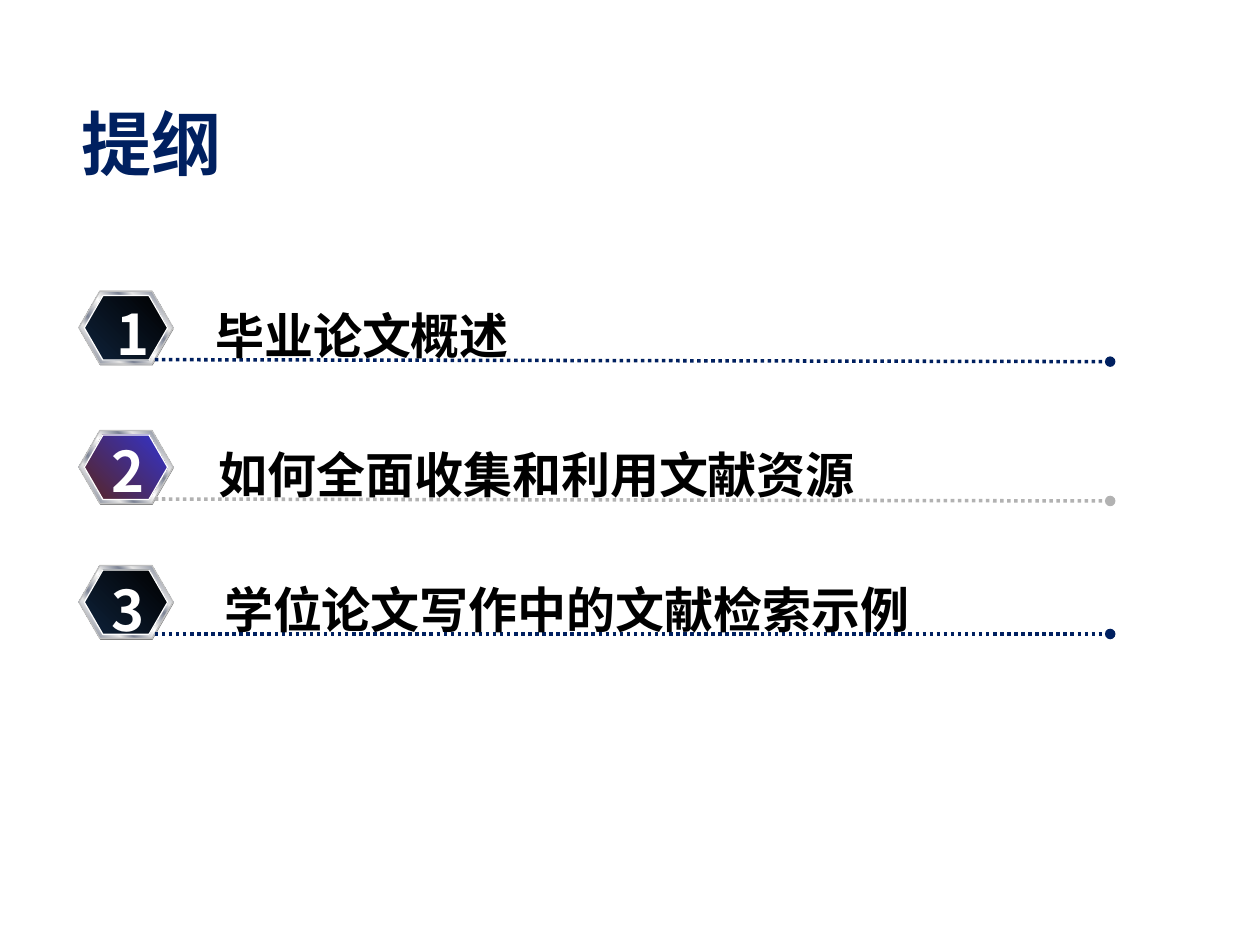
import pptx
import pptx.dml.color
import pptx.enum.dml
import pptx.enum.shapes
import pptx.enum.text
import pptx.oxml
import pptx.oxml.ns
import pptx.util
from lxml import etree

Cm = pptx.util.Cm
Pt = pptx.util.Pt
qn = pptx.oxml.ns.qn
ALIGN = pptx.enum.text.PP_ALIGN
ANCHOR = pptx.enum.text.MSO_ANCHOR

COLOURS = {
    "navy": "002060", "grey": "B2B2B2", "black": "000000", "white": "FFFFFF",
    "shade": "808080", "rim": "C0C0C0", "night": "0E223A", "maroon": "592524",
    "blue": "3333CC", "light": "E6E6E6", "steel": "7D8496",
}
CJK_FONT = "Noto Sans CJK SC"

# Gradient stops: (percent, colour)
METAL = [(0, "light"), (8, "steel"), (26, "light"), (34, "steel"),
         (46, "light"), (50, "white"), (54, "light"), (66, "steel"),
         (74, "light"), (92, "steel"), (100, "light")]
DARK = [(0, "night"), (100, "black")]
VIVID = [(0, "maroon"), (100, "blue")]

TITLE = {"name": "DejaVu Sans", "size": Pt(40), "bold": True}
TOPIC = {"name": CJK_FONT, "size": Pt(28), "bold": True}
NUMBER = {"name": CJK_FONT, "size": Pt(32), "bold": True}


def rgb(name):
    return pptx.dml.color.RGBColor.from_string(COLOURS[name])


class OutlineSlide:
    """Holds the slide and draws each kind of element on it."""

    def __init__(self, deck):
        self.page = deck.slides.add_slide(deck.slide_layouts[6])

    def text(self, words, left, top, width, height, style, colour,
             align=ALIGN.LEFT, anchor=ANCHOR.TOP, wrap=False):
        box = self.page.shapes.add_textbox(
            Cm(left), Cm(top), Cm(width), Cm(height))
        frame = box.text_frame
        frame.word_wrap = wrap
        frame.vertical_anchor = anchor
        para = frame.paragraphs[0]
        para.alignment = align
        span = para.add_run()
        span.text = words
        for key, value in style.items():
            setattr(span.font, key, value)
        span.font.color.rgb = rgb(colour)
        east_asian = etree.SubElement(span.font._element, qn("a:ea"))
        east_asian.set("typeface", CJK_FONT)

    def hexagon(self, left, top, width, height, fill, line=None):
        shape = self.page.shapes.add_shape(
            pptx.enum.shapes.MSO_SHAPE.HEXAGON,
            Cm(left), Cm(top), Cm(width), Cm(height))
        shape.shadow.inherit = False
        shape.adjustments[0] = 0.289
        if isinstance(fill, str):
            shape.fill.solid()
            shape.fill.fore_color.rgb = rgb(fill)
        else:
            self.gradient(shape, fill)
        if line:
            shape.line.color.rgb = rgb(line)
            shape.line.width = Pt(0.75)
        else:
            shape.line.fill.background()

    def gradient(self, shape, stops):
        shape.fill.gradient()
        shape.fill.gradient_angle = 45
        stop_list = next(shape._element.spPr.iter(qn("a:gsLst")))
        for old_stop in list(stop_list):
            stop_list.remove(old_stop)
        for percent, colour in stops:
            stop = etree.SubElement(stop_list, qn("a:gs"))
            stop.set("pos", str(percent * 1000))
            etree.SubElement(stop, qn("a:srgbClr")).set("val", COLOURS[colour])

    def dotted_line(self, left, top, right, bottom, colour):
        rule = self.page.shapes.add_connector(
            pptx.enum.shapes.MSO_CONNECTOR.STRAIGHT,
            Cm(left), Cm(top), Cm(right), Cm(bottom))
        rule.line.color.rgb = rgb(colour)
        rule.line.width = Pt(2)
        # ROUND_DOT is the sysDot preset
        rule.line.dash_style = pptx.enum.dml.MSO_LINE.ROUND_DOT
        etree.SubElement(rule.line._get_or_add_ln(),
                         qn("a:tailEnd")).set("type", "oval")
        etree.SubElement(rule._element.spPr, qn("a:effectLst"))

    def badge(self, top, core):
        self.hexagon(1.6, top + 0.03, 1.9, 1.47, "shade")
        self.hexagon(1.59, top, 1.9, 1.47, METAL, "rim")
        self.hexagon(1.7, top + 0.09, 1.68, 1.3, core, "white")


# Topic, row top, topic left and width, number left and drop, core, line, slope
ROWS = [
    ("毕业论文概述", 5.87, 4.09, 6.5, 2.08, 0.05, DARK, "navy", 0.04),
    ("如何全面收集和利用文献资源", 8.68, 4.16, 13.49, 1.98, 0, VIVID, "grey", 0.04),
    ("学位论文写作中的文献检索示例", 11.4, 4.27, 14.48, 1.98, 0.08, DARK, "navy", 0),
]


def main():
    deck = pptx.Presentation()
    deck.slide_width, deck.slide_height = Cm(25.4), Cm(19.05)
    outline = OutlineSlide(deck)

    # Heading
    outline.text("提纲", 1.4, 1.98, 20.24, 1.78, TITLE, "navy",
                 anchor=ANCHOR.MIDDLE, wrap=True)

    # Numbered topics
    for number, row in enumerate(ROWS, 1):
        topic, top, left, width, number_left, drop, core, line, slope = row
        outline.badge(top, core)
        outline.dotted_line(3.12, top + 1.38, 22.38, top + 1.38 + slope, line)
        outline.text(topic, left, top + 0.16, width, 1.45, TOPIC, "black")
        outline.text(str(number), number_left, top + drop, 1.22, 1.63,
                     NUMBER, "white", align=ALIGN.CENTER)

    deck.save("out.pptx")


if __name__ == "__main__":
    main()
